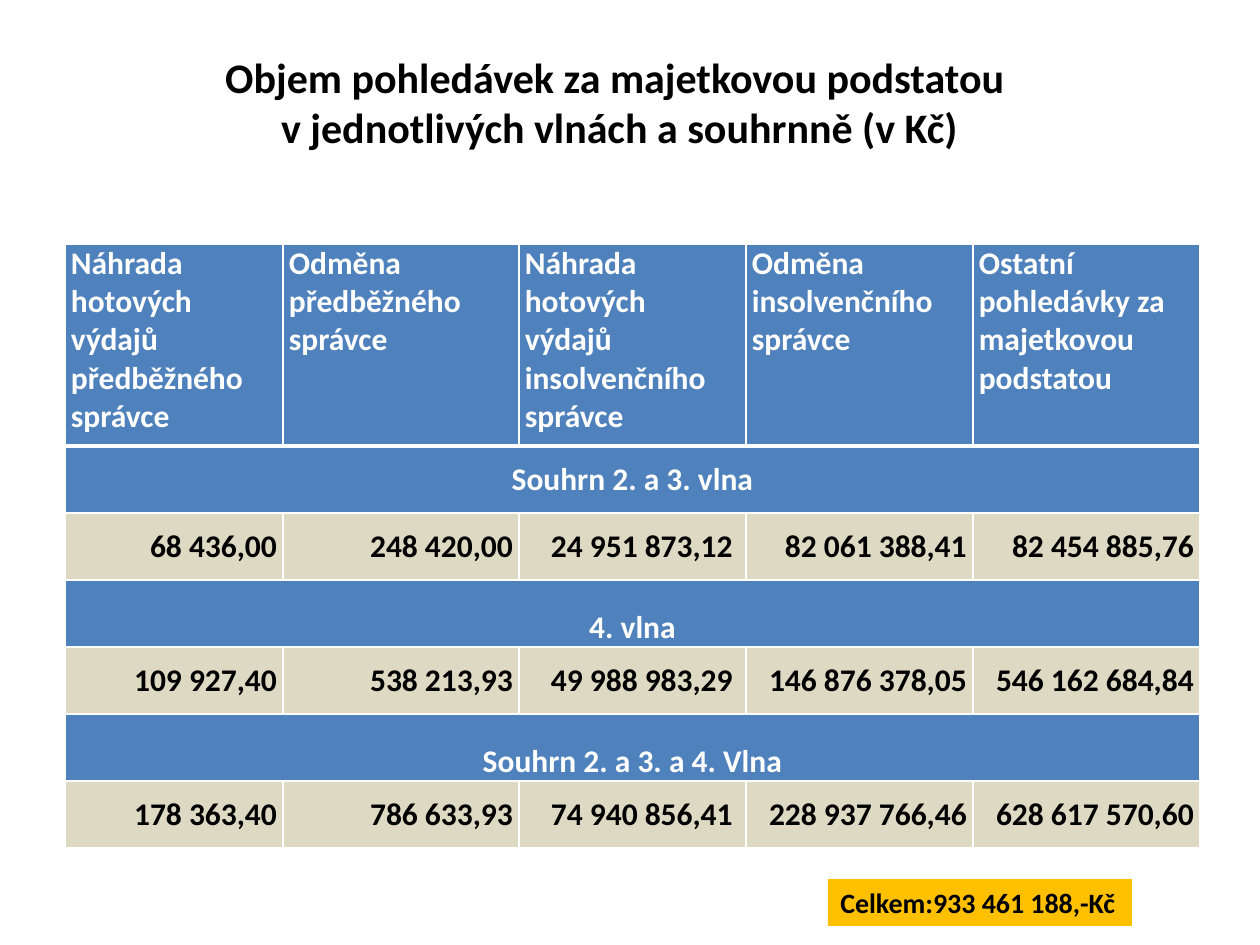
from lxml import etree
from pptx import Presentation
from pptx import util as u
from pptx.dml.color import RGBColor
from pptx.enum import shapes, text
from pptx.oxml.ns import qn

EMU_PER_PX = 914400 / 126
FONT = "Calibri"
COLORS = {
    "black": "000000",
    "white": "FFFFFF",
    "blue": "4F81BD",
    "sand": "DDD9C3",
    "amber": "FFC000",
}
ALIGN = text.PP_ALIGN
ANCHOR = text.MSO_ANCHOR

COLUMN_WIDTHS = [218, 236, 227, 227, 227]
HEADER_HEIGHT, ROW_HEIGHT = 202, 67
HEADERS = [
    "Náhrada hotových výdajů předběžného správce",
    "Odměna předběžného správce",
    "Náhrada hotových výdajů insolvenčního správce",
    "Odměna insolvenčního správce",
    "Ostatní pohledávky za majetkovou podstatou",
]
WAVES = [
    ("Souhrn 2. a 3. vlna", ANCHOR.MIDDLE,
     ["68 436,00", "248 420,00", "24 951 873,12 ", " 82 061 388,41", "82 454 885,76"]),
    ("4. vlna", ANCHOR.BOTTOM,
     ["109 927,40", "538 213,93", "49 988 983,29 ", "146 876 378,05", "546 162 684,84"]),
    ("Souhrn 2. a 3. a 4. Vlna", ANCHOR.BOTTOM,
     ["178 363,40", "786 633,93", "74 940 856,41 ", "228 937 766,46", "628 617 570,60"]),
]


def px(length):
    return u.Emu(round(length * EMU_PER_PX))


def color(name):
    return RGBColor.from_string(COLORS[name])


def set_borders(cell, bottom=1):
    """Draw white cell borders; the bottom one may be thicker (points)."""
    properties = cell._tc.get_or_add_tcPr()
    widths = {"a:lnL": 1, "a:lnR": 1, "a:lnT": 1, "a:lnB": bottom}
    for index, (tag, width) in enumerate(widths.items()):
        line = etree.Element(qn(tag), w=str(u.Pt(width)))
        fill = etree.SubElement(line, qn("a:solidFill"))
        etree.SubElement(fill, qn("a:srgbClr"), val=COLORS["white"])
        properties.insert(index, line)


class SlideBuilder:
    def __init__(self, slide):
        self.slide = slide

    def fill_text(self, frame, content, size, ink="black", align=ALIGN.LEFT, before=0):
        frame.text = content
        for paragraph in frame.paragraphs:
            paragraph.alignment = align
            paragraph.space_before = u.Pt(before)
            for run in paragraph.runs:
                run.font.name = FONT
                run.font.size = u.Pt(size)
                run.font.bold = True
                run.font.color.rgb = color(ink)

    def title(self, content, left, top, width, height):
        box = self.slide.shapes.add_textbox(px(left), px(top), px(width), px(height))
        box.text_frame.word_wrap = True
        self.fill_text(box.text_frame, content, 24, align=ALIGN.CENTER)

    def label(self, content, left, top, width, height):
        shape = self.slide.shapes.add_shape(
            shapes.MSO_SHAPE.RECTANGLE, px(left), px(top), px(width), px(height))
        shape.shadow.inherit = False
        shape.fill.solid()
        shape.fill.fore_color.rgb = color("amber")
        shape.line.fill.background()
        shape.text_frame.word_wrap = False
        shape.text_frame.vertical_anchor = ANCHOR.TOP
        self.fill_text(shape.text_frame, content, 16)

    def cell(self, cell, content, fill, ink, align, anchor, bottom=1):
        cell.margin_left = cell.margin_right = px(6)
        cell.margin_top = cell.margin_bottom = 0
        cell.vertical_anchor = anchor
        cell.fill.solid()
        cell.fill.fore_color.rgb = color(fill)
        set_borders(cell, bottom)
        self.fill_text(cell.text_frame, content, 18, ink, align, before=6)

    def claims_table(self, left, top):
        heights = [HEADER_HEIGHT] + [ROW_HEIGHT] * (2 * len(WAVES))
        table = self.slide.shapes.add_table(
            len(heights), len(COLUMN_WIDTHS), px(left), px(top),
            px(sum(COLUMN_WIDTHS)), px(sum(heights))).table
        for column, width in zip(table.columns, COLUMN_WIDTHS):
            column.width = px(width)
        for row, height in zip(table.rows, heights):
            row.height = px(height)

        for column, header in enumerate(HEADERS):
            self.cell(table.cell(0, column), header, "blue", "white",
                      ALIGN.LEFT, ANCHOR.TOP, bottom=3)
        for index, (name, anchor, amounts) in enumerate(WAVES):
            row = 1 + 2 * index
            band = table.cell(row, 0)
            band.merge(table.cell(row, len(COLUMN_WIDTHS) - 1))
            self.cell(band, name, "blue", "white", ALIGN.CENTER, anchor)
            for column, amount in enumerate(amounts):
                self.cell(table.cell(row + 1, column), amount, "sand", "black",
                          ALIGN.RIGHT, ANCHOR.MIDDLE)


def main():
    presentation = Presentation()
    presentation.slide_width, presentation.slide_height = px(1260), px(945)
    builder = SlideBuilder(presentation.slides.add_slide(presentation.slide_layouts[6]))
    builder.claims_table(65, 244)
    builder.title("Objem pohledávek za majetkovou podstatou \n"
                  "v jednotlivých vlnách a souhrnně (v Kč)", 54, 45, 1131, 115)
    builder.label("Celkem:933 461 188,-Kč", 828, 879, 304, 47)
    presentation.save("out.pptx")


if __name__ == "__main__":
    main()
